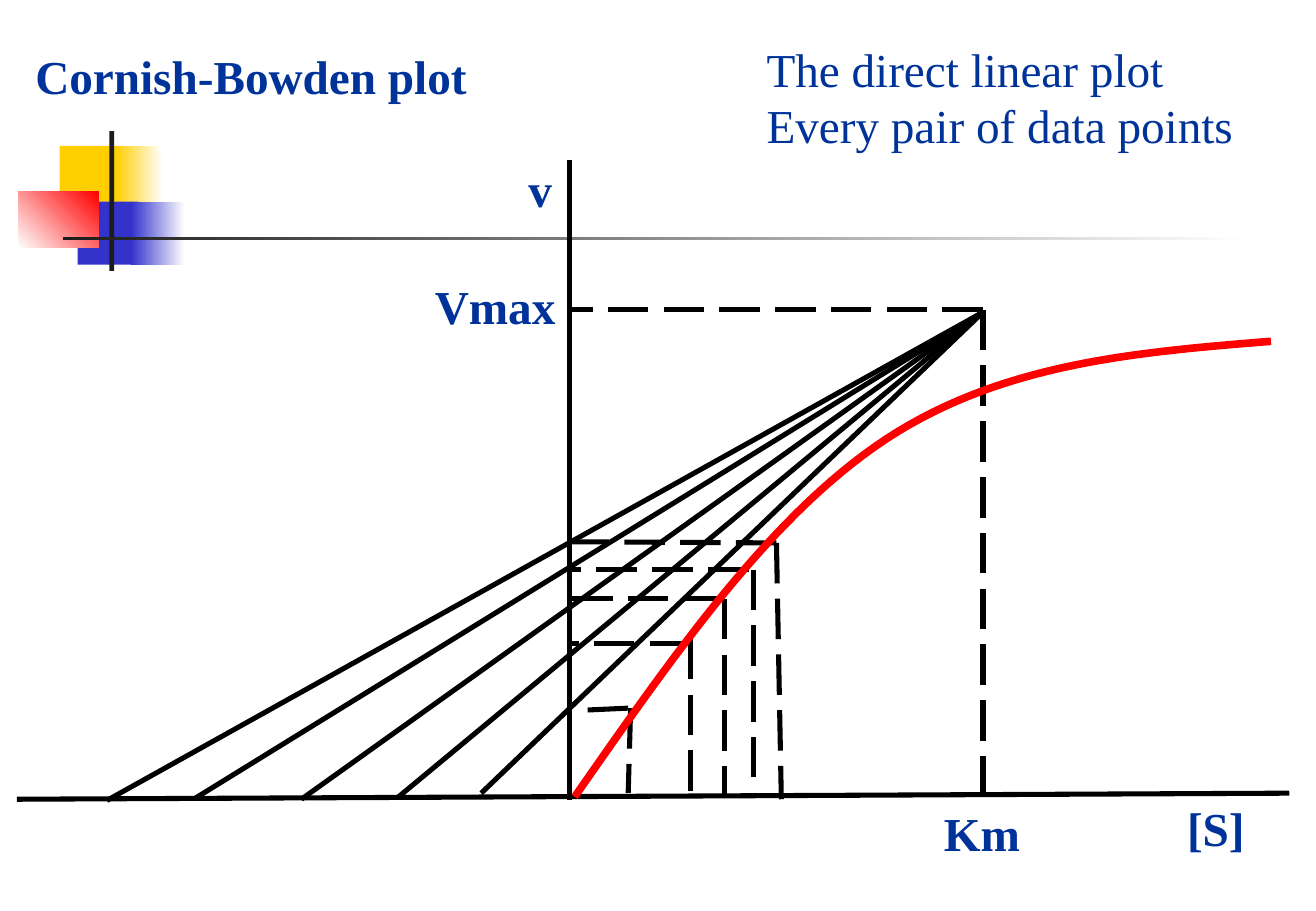
from dataclasses import dataclass
from typing import Optional

import pptx
import pptx.dml.color
import pptx.enum.dml
import pptx.enum.shapes
import pptx.enum.text
import pptx.util
from lxml import etree
from pptx.dml.color import RGBColor
from pptx.util import Inches

FONT = "Times New Roman"
NAVY = RGBColor(0x00, 0x33, 0x99)
BLACK = RGBColor(0x00, 0x00, 0x00)
WHITE = RGBColor(0xFF, 0xFF, 0xFF)
RED = RGBColor(0xFF, 0x00, 0x00)
YELLOW = RGBColor(0xFF, 0xCF, 0x01)
BLUE = RGBColor(0x33, 0x33, 0xCC)
CHARCOAL = RGBColor(0x1C, 0x1C, 0x1C)

Point = tuple[float, float]


@dataclass
class Block:
    left: float
    top: float
    width: float
    height: float
    color: RGBColor
    end_color: Optional[RGBColor] = None
    angle: float = 0


@dataclass
class Line:
    start: Point
    end: Point
    dashed: bool = False


@dataclass
class Label:
    text: str
    left: float
    top: float
    width: float


ORNAMENT = [
    Block(0.49, 1.2, 0.52, 0.52, YELLOW),
    Block(0.95, 1.2, 0.39, 0.52, YELLOW, WHITE),
    Block(0.64, 1.66, 0.5, 0.52, BLUE),
    Block(1.08, 1.66, 0.44, 0.52, BLUE, WHITE),
    Block(0.15, 1.58, 0.66, 0.46, WHITE, RED, 45),
    Block(0.9, 1.08, 0.04, 1.15, CHARCOAL),
    Block(0.52, 1.95, 9.75, 0.03, CHARCOAL, WHITE),
]
AXES = [Line((4.69, 1.32), (4.69, 6.59)), Line((10.61, 6.53), (0.14, 6.58))]

INTERSECTION = (8.09, 2.57)
FAN_FEET = [(0.88, 6.59), (1.61, 6.57), (2.48, 6.58), (3.28, 6.56), (3.96, 6.53)]
FAN = [Line(INTERSECTION, foot) for foot in FAN_FEET]

GUIDES = [
    Line(start, end, dashed=True)
    for start, end in [
        ((8.09, 2.55), (8.09, 6.6)), ((8.09, 2.55), (4.69, 2.55)),
        ((6.39, 4.47), (4.65, 4.46)), ((6.39, 4.47), (6.43, 6.58)),
        ((6.16, 4.69), (4.65, 4.69)), ((6.2, 4.69), (6.2, 6.55)),
        ((5.96, 4.93), (4.69, 4.93)), ((5.96, 4.93), (5.96, 6.55)),
        ((5.68, 5.3), (4.69, 5.3)), ((5.68, 5.26), (5.68, 6.55)),
        ((5.17, 5.83), (4.73, 5.85)), ((5.19, 5.83), (5.17, 6.53)),
    ]
]
CURVE = [
    ((4.73, 6.56), (5.54, 5.4), (6.34, 4.24), (7.3, 3.61)),
    ((7.3, 3.61), (8.25, 2.99), (9.35, 2.9), (10.46, 2.81)),
]
CURVE_STEPS = 30
LABELS = [
    Label("Km", 7.67, 6.57, 0.84),
    Label("Vmax", 3.48, 2.23, 1.21),
    Label("[S]", 9.67, 6.53, 0.68),
    Label("v", 4.25, 1.27, 0.4),
]


def place(sp, left: float, top: float, width: float, height: float) -> None:
    sp.left, sp.top = Inches(left), Inches(top)
    sp.width, sp.height = Inches(width), Inches(height)


def write(tf, lines: list[str], bold: bool, wrap: bool = True) -> None:
    tf.text = "\n".join(lines)
    tf.word_wrap = wrap
    tf.auto_size = pptx.enum.text.MSO_AUTO_SIZE.NONE
    tf.vertical_anchor = pptx.enum.text.MSO_ANCHOR.TOP
    for p in tf.paragraphs:
        p.alignment = pptx.enum.text.PP_ALIGN.LEFT
        p.font.name = FONT
        p.font.size = pptx.util.Pt(28)
        p.font.bold = bold
        p.font.color.rgb = NAVY


def add_block(s, block: Block) -> None:
    sp = s.shapes.add_shape(
        pptx.enum.shapes.MSO_SHAPE.RECTANGLE, Inches(block.left),
        Inches(block.top), Inches(block.width), Inches(block.height))
    sp.shadow.inherit = False
    sp.line.fill.background()
    if block.end_color is None:
        sp.fill.solid()
        sp.fill.fore_color.rgb = block.color
        return
    sp.fill.gradient()
    sp.fill.gradient_angle = block.angle
    for stop, color in zip(sp.fill.gradient_stops, (block.color, block.end_color)):
        stop.color.rgb = color


def add_line(s, line: Line) -> None:
    cx = s.shapes.add_connector(
        pptx.enum.shapes.MSO_CONNECTOR.STRAIGHT,
        *(Inches(v) for v in line.start + line.end))
    cx.line.color.rgb = BLACK
    cx.line.width = pptx.util.Pt(3)
    if line.dashed:
        cx.line.dash_style = pptx.enum.dml.MSO_LINE.LONG_DASH
    etree.SubElement(cx._element.spPr, pptx.oxml.ns.qn("a:effectLst"))


def bezier(a: Point, b: Point, c: Point, d: Point, t: float) -> Point:
    u = 1 - t
    x, y = (u**3 * p + 3 * u * u * t * q + 3 * u * t * t * r + t**3 * w
            for p, q, r, w in zip(a, b, c, d))
    return x, y


def add_curve(s) -> None:
    points = [bezier(*segment, i / CURVE_STEPS)
              for segment in CURVE for i in range(CURVE_STEPS + 1)]
    start, *rest = [(Inches(x), Inches(y)) for x, y in points]
    builder = s.shapes.build_freeform(*start)
    builder.add_line_segments(rest, close=False)
    sp = builder.convert_to_shape()
    sp.shadow.inherit = False
    sp.fill.background()
    sp.line.color.rgb = RED
    sp.line.width = pptx.util.Pt(4.5)


def add_text(s, lines: list[str], left: float, top: float, width: float,
             height: float, bold: bool, wrap: bool):
    sp = s.shapes.add_textbox(
        Inches(left), Inches(top), Inches(width), Inches(height))
    write(sp.text_frame, lines, bold, wrap)
    return sp


def main() -> None:
    prs = pptx.Presentation()
    prs.slide_width, prs.slide_height = Inches(10.83), Inches(7.5)
    s = prs.slides.add_slide(prs.slide_layouts[5])

    title = s.shapes.title
    place(title, 0.19, 0.34, 10.6, 0.57)
    write(title.text_frame, ["Cornish-Bowden plot"], bold=True)

    for block in ORNAMENT:
        add_block(s, block)
    for line in AXES + FAN + GUIDES:
        add_line(s, line)
    add_curve(s)
    for label in LABELS:
        add_text(s, [label.text], label.left, label.top, label.width, 0.57,
                 bold=True, wrap=False)

    caption = add_text(s, ["The direct linear plot", "Every pair of data points"],
                       5.96, 0.28, 4.73, 1.04, bold=False, wrap=True)
    for p in caption.text_frame.paragraphs:
        p._p.get_or_add_pPr().set("indent", str(Inches(0.25)))

    prs.save("out.pptx")


if __name__ == "__main__":
    main()
